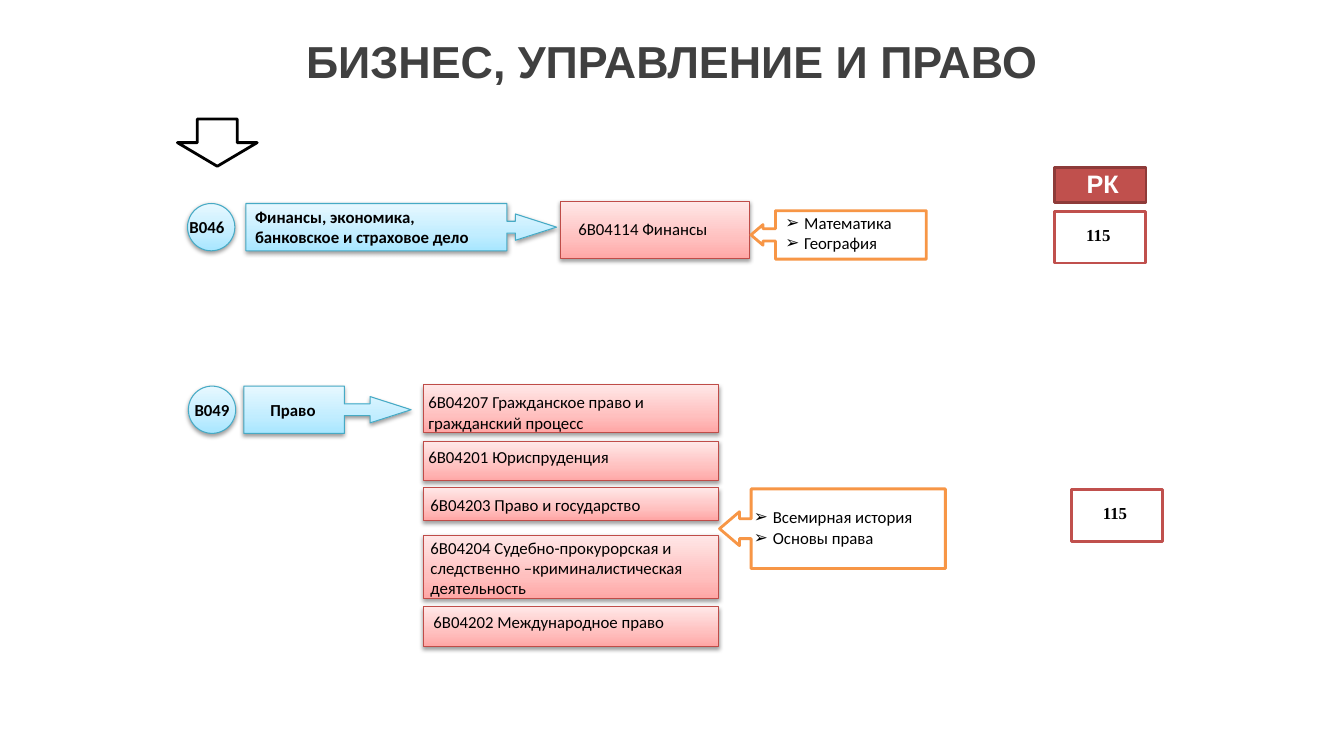
from lxml import etree
from pptx import Presentation
from pptx.dml.color import RGBColor
from pptx.enum.shapes import MSO_SHAPE as Preset
from pptx.enum.text import MSO_ANCHOR as Anchor, PP_ALIGN as Align
from pptx.oxml import parse_xml
from pptx.oxml.ns import nsdecls, qn
from pptx.util import Pt

BLUE = ("A7E6FF", "C1EDFF", "E7F8FF")
RED = ("FFA6A5", "FFC0BF", "FFE7E7")
STOPS = (0, 35000, 100000)


def colour(value):
    return RGBColor.from_string(value)


def write_text(frame, text, font="Calibri", size=12, color="000000", bold=False,
               align=Align.LEFT, anchor=Anchor.TOP, margins=(0, 0, 0, 0),
               wrap=True, bullet=None):
    frame.word_wrap = wrap
    frame.vertical_anchor = anchor
    frame.margin_left, frame.margin_top, frame.margin_right, frame.margin_bottom = map(Pt, margins)
    for index, line in enumerate(text.split("\n")):
        paragraph = frame.add_paragraph() if index else frame.paragraphs[0]
        paragraph.alignment = align
        run = paragraph.add_run()
        run.text = line
        run.font.name = font
        run.font.size = Pt(size)
        run.font.bold = bold
        run.font.color.rgb = colour(color)
        if bullet:
            properties = paragraph._p.get_or_add_pPr()
            properties.set("marL", str(Pt(13.5)))
            properties.set("indent", str(-Pt(13.5)))
            etree.SubElement(properties, qn("a:buFont"), typeface="Wingdings 3" if bullet != "➢" else "Arial")
            etree.SubElement(properties, qn("a:buChar"), char=bullet)


class Diagram:
    def __init__(self, slide):
        self.slide = slide

    def title(self, text):
        title = self.slide.shapes.title
        title.left, title.top, title.width, title.height = Pt(0), Pt(1.5), Pt(960), Pt(84)
        write_text(title.text_frame, text, font="Arial", size=32, color="404040",
                   bold=True, align=Align.CENTER, anchor=Anchor.MIDDLE)

    def block(self, preset, box, line, fill="FFFFFF", weight=2, adjustments=()):
        shape = self.slide.shapes.add_shape(preset, *map(Pt, box))
        shape.shadow.inherit = False
        for index, value in enumerate(adjustments):
            shape.adjustments[index] = value
        shape.fill.solid()
        shape.fill.fore_color.rgb = colour(fill)
        shape.line.color.rgb = colour(line)
        shape.line.width = Pt(weight)
        return shape

    def glossy(self, preset, box, line, shades, adjustments=()):
        shape = self.block(preset, box, line, weight=0.75, adjustments=adjustments)
        shape.fill.gradient()
        shape.fill.gradient_angle = 90
        properties = shape._element.spPr
        stops = properties.find(".//" + qn("a:gsLst"))
        for stop in list(stops):
            stops.remove(stop)
        for position, shade in zip(STOPS, shades):
            stop = etree.SubElement(stops, qn("a:gs"), pos=str(position))
            etree.SubElement(stop, qn("a:srgbClr"), val=shade)
        properties.find(qn("a:effectLst")).append(parse_xml(
            f'<a:outerShdw {nsdecls("a")} blurRad="{Pt(3.1)}" dist="{Pt(1.6)}" dir="5400000" '
            'rotWithShape="0"><a:srgbClr val="000000"><a:alpha val="38000"/></a:srgbClr></a:outerShdw>'))
        return shape

    def code(self, text, left, top, right_margin=0):
        shape = self.glossy(Preset.OVAL, (left, top, 33.8, 33.8), "46AAC5", BLUE)
        write_text(shape.text_frame, text, bold=True, align=Align.CENTER, anchor=Anchor.MIDDLE,
                   margins=(0, 0, right_margin, 0), wrap=False)

    def group(self, text, box, body, margins):
        shape = self.glossy(Preset.RIGHT_ARROW_CALLOUT, box, "46AAC5", BLUE,
                            (0.25, 0.278, 0.868, body))
        write_text(shape.text_frame, text, bold=True, margins=margins)

    def programme(self, text, box, margins):
        shape = self.glossy(Preset.RECTANGLE, box, "BF4C48", RED)
        write_text(shape.text_frame, text, margins=margins)

    def subjects(self, text, box, margins):
        shape = self.block(Preset.LEFT_ARROW_CALLOUT, box, "F79646",
                           adjustments=(0.25, 0.213, 0.25, 0.86))
        write_text(shape.text_frame, text, margins=margins, bullet="➢")

    def score(self, text, left, top):
        shape = self.block(Preset.RECTANGLE, (left, top, 65, 36.7), "C0504D")
        write_text(shape.text_frame, text, font="Times New Roman", bold=True,
                   margins=(22.4, 9.4, 0, 0))

    def heading(self, text, box):
        shape = self.block(Preset.RECTANGLE, box, "8E3B39", fill="C0504D")
        write_text(shape.text_frame, text, font="Arial", size=18, color="FFFFFF", bold=True,
                   margins=(23, 0.7, 0, 0))


def main():
    presentation = Presentation()
    presentation.slide_width, presentation.slide_height = Pt(960), Pt(540)
    diagram = Diagram(presentation.slides.add_slide(presentation.slide_layouts[5]))

    diagram.title("БИЗНЕС, УПРАВЛЕНИЕ И ПРАВО")
    diagram.block(Preset.DOWN_ARROW, (126.7, 85, 57, 33.8), "000000")
    diagram.heading("РК", (753.1, 119.5, 65.5, 25.2))

    diagram.code("B046", 134, 145.4, right_margin=6)
    diagram.group("Финансы, экономика,\nбанковское и страховое дело",
                  (175.7, 145.4, 221.8, 33.8), 0.84, (6.5, 2.2, 0, 0))
    diagram.programme("6В04114 Финансы", (400.3, 144, 135.4, 41), (12.8, 12.2, 0, 0))
    diagram.subjects("Математика\nГеография", (536.4, 150.5, 125.3, 34.6), (7.2, 1.4, 0, 0))
    diagram.score("115", 753.5, 151.2)

    diagram.code("B049", 134.6, 275.8)
    diagram.group("Право", (174.2, 275.8, 119.5, 33.8), 0.601, (19, 9.4, 0, 0))
    law_programmes = (
        ("6В04207 Гражданское право и\nгражданский процесс", 275, 33.8, 3.5, 5.1),
        ("6В04201 Юриспруденция", 315.4, 28.1, 3.5, 3.6),
        ("6В04203 Право и государство", 348.5, 23, 5, 5),
        ("6В04204 Судебно-прокурорская и\nследственно –криминалистическая\nдеятельность",
         382.3, 45.4, 5, 1.5),
        ("6В04202 Международное право", 433.4, 28.1, 7.2, 3.6),
    )
    for text, top, height, indent, inset in law_programmes:
        diagram.programme(text, (302.5, top, 211, height), (indent, inset, 0, 0))
    diagram.subjects("Всемирная история\nОсновы права", (514, 349.2, 161.3, 56.9), (2, 13, 0, 0))
    diagram.score("115", 765.4, 349.9)

    presentation.save("out.pptx")


if __name__ == "__main__":
    main()
